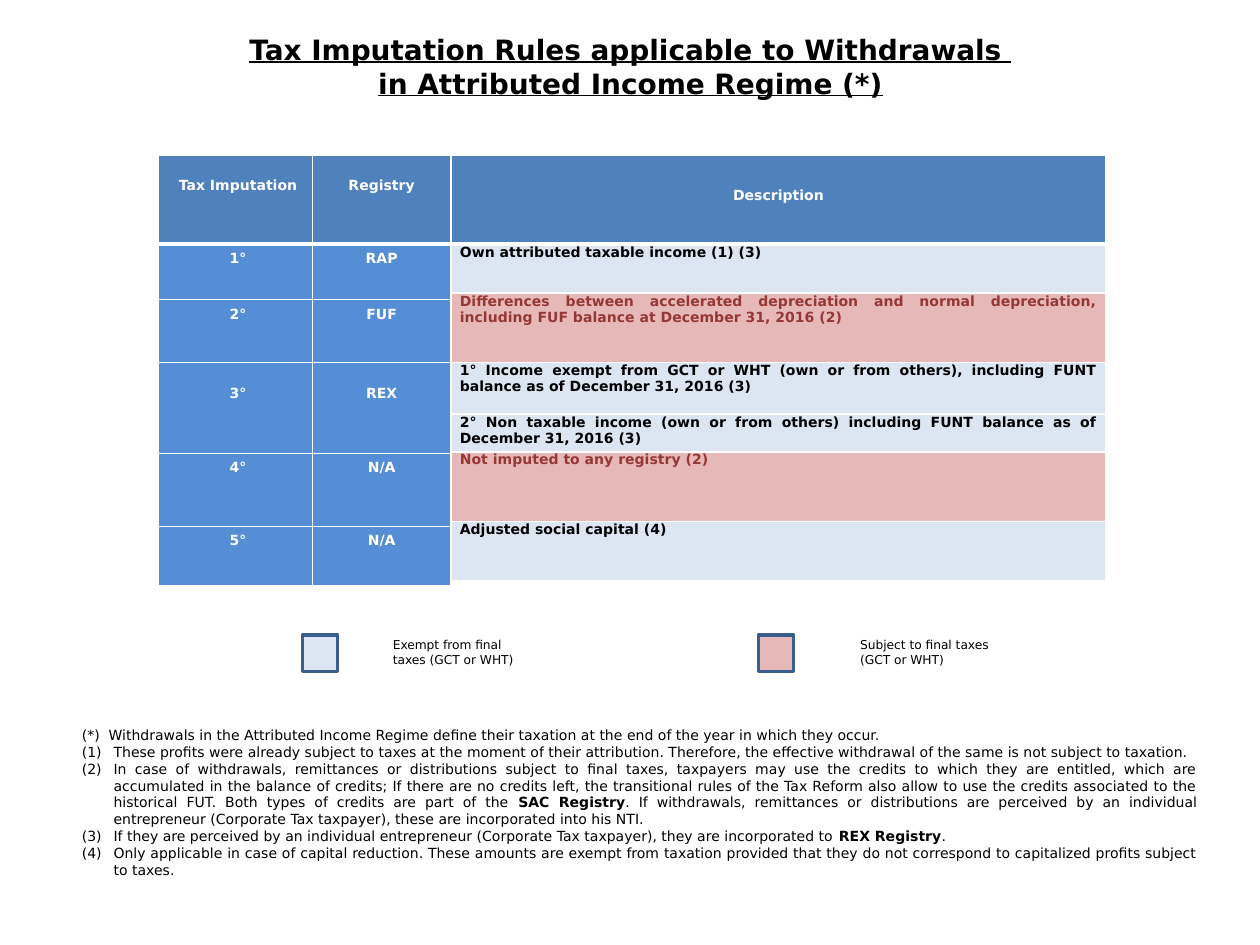
from dataclasses import dataclass

from lxml.etree import SubElement
from pptx import Presentation
from pptx.dml.color import RGBColor
from pptx.enum.shapes import MSO_SHAPE
from pptx.enum.text import MSO_ANCHOR, MSO_AUTO_SIZE, PP_ALIGN
from pptx.oxml import parse_xml
from pptx.oxml.ns import nsdecls, qn
from pptx.util import Cm, Pt


@dataclass(frozen=True)
class Theme:
    """Colours, font and type sizes of the slide."""
    font: str = "DejaVu Sans"
    title: int = 16
    body: int = 8
    legend: int = 7
    black: str = "000000"
    white: str = "FFFFFF"
    header: str = "4F81BD"
    order: str = "558ED5"
    exempt: str = "DCE6F2"
    taxed: str = "E6B9B8"
    taxed_text: str = "953735"
    key_line: str = "3A5F8C"


THEME = Theme()
TABLE_TOP = 3.12
CELL_INSET = 0.13
BLANK_LINE = 0.33
ORDER_HEIGHTS = [1.8, 1.12, 1.27, 1.83, 1.47, 1.19]
DESCRIPTION_HEIGHTS = [1.8, 0.99, 1.4, 1.04, 0.76, 1.4, 1.19]
ORDER_COLUMNS = [
    (3.2, 3.2, ["Tax Imputation", "1°", "2°", "3°", "4°", "5°"]),
    (6.3, 2.79, ["Registry", "RAP", "FUF", "REX", "N/A", "N/A"]),
]
DESCRIPTIONS = [
    ("Own attributed taxable income (1) (3)", False, PP_ALIGN.JUSTIFY),
    ("Differences between accelerated depreciation and normal depreciation, "
     "including FUF balance at December 31, 2016 (2)", True, PP_ALIGN.JUSTIFY),
    ("1° Income exempt from GCT or WHT (own or from others), including FUNT "
     "balance as of December 31, 2016 (3)", False, PP_ALIGN.JUSTIFY),
    ("2° Non taxable income (own or from others) including FUNT balance as of "
     "December 31, 2016 (3)", False, PP_ALIGN.JUSTIFY),
    ("Not imputed to any registry (2)", True, PP_ALIGN.LEFT),
    ("Adjusted social capital (4)", False, PP_ALIGN.LEFT),
]
LEGEND = [
    (6.1, 7.67, THEME.exempt, "Exempt from final taxes (GCT or WHT)"),
    (15.29, 17.09, THEME.taxed, "Subject to final taxes (GCT or WHT)"),
]
REGIME_NOTE = ("(*)\tWithdrawals in the Attributed Income Regime define their taxation "
               "at the end of the year in which they occur.")
NUMBERED_NOTES = [
    ["These profits were already subject to taxes at the moment of their attribution. "
     "Therefore, the effective withdrawal of the same is not subject to taxation."],
    ["In case of withdrawals, remittances or distributions subject to final taxes, "
     "taxpayers may use the credits to which they are entitled, which are accumulated in "
     "the balance of credits; If there are no credits left, the transitional rules of the "
     "Tax Reform also allow to use the credits associated to the historical FUT. Both "
     "types of credits are part of the ", "SAC Registry",
     ". If withdrawals, remittances or distributions are perceived by an individual "
     "entrepreneur (Corporate Tax taxpayer), these are incorporated into his NTI."],
    ["If they are perceived by an individual entrepreneur (Corporate Tax taxpayer), "
     "they are incorporated to ", "REX Registry", "."],
    ["Only applicable in case of capital reduction. These amounts are exempt from taxation "
     "provided that they do not correspond to capitalized profits subject to taxes."],
]


def style_run(run, size, color=THEME.black, bold=False, underline=None):
    """Apply the theme font to one run."""
    font = run.font
    font.name, font.size = THEME.font, Pt(size)
    font.bold, font.underline = bold, underline
    font.color.rgb = RGBColor.from_string(color)


def add_title(slide, text):
    """Place and format the title placeholder."""
    title = slide.shapes.title
    title.left, title.top, title.width, title.height = Cm(4.62), Cm(0.53), Cm(16.18), Cm(1.63)
    frame = title.text_frame
    frame.text = text
    frame.word_wrap = False
    frame.auto_size = MSO_AUTO_SIZE.SHAPE_TO_FIT_TEXT
    frame.vertical_anchor = MSO_ANCHOR.TOP
    for paragraph in frame.paragraphs:
        paragraph.alignment = PP_ALIGN.CENTER
        for run in paragraph.runs:
            style_run(run, THEME.title, bold=True, underline=True)


def add_borders(cell, row):
    """Draw white cell borders, thicker under the header row."""
    for index, side in enumerate("LRTB"):
        points = 3 if (row, side) in ((0, "B"), (1, "T")) else 1
        border = parse_xml(
            f'<a:ln{side} {nsdecls("a")} w="{Pt(points)}"><a:solidFill>'
            f'<a:srgbClr val="{THEME.white}"/></a:solidFill></a:ln{side}>')
        cell._tc.get_or_add_tcPr().insert(index, border)


def fill_cell(cell, row, text, fill, color, align, side_inset, top, bottom):
    """Write and format one table cell."""
    cell.margin_left = cell.margin_right = Cm(side_inset)
    cell.margin_top, cell.margin_bottom = Cm(top), Cm(bottom)
    cell.fill.solid()
    cell.fill.fore_color.rgb = RGBColor.from_string(fill)
    add_borders(cell, row)
    cell.text = text
    paragraph = cell.text_frame.paragraphs[0]
    paragraph.alignment = align
    style_run(paragraph.runs[0], THEME.body, color, bold=True)


def add_column(slide, left, width, heights):
    """Add a one-column table and return its cells."""
    table = slide.shapes.add_table(
        len(heights), 1, Cm(left), Cm(TABLE_TOP), Cm(width), Cm(sum(heights))).table
    table.horz_banding = False
    table.columns[0].width = Cm(width)
    for row, height in zip(table.rows, heights):
        row.height = Cm(height)
    return [row.cells[0] for row in table.rows]


def add_order_column(slide, left, width, labels):
    """Add a column of imputation orders or registries."""
    cells = add_column(slide, left, width, ORDER_HEIGHTS)
    for row, (cell, label) in enumerate(zip(cells, labels)):
        top = CELL_INSET + (BLANK_LINE if row in (0, 3) else 0)
        fill = THEME.order if row else THEME.header
        fill_cell(cell, row, label, fill, THEME.white, PP_ALIGN.CENTER, 0.25, top, CELL_INSET)


def add_description_column(slide):
    """Add the description column, coloured by tax treatment."""
    header, *cells = add_column(slide, 9.09, 13.21, DESCRIPTION_HEIGHTS)
    fill_cell(header, 0, "Description", THEME.header, THEME.white, PP_ALIGN.CENTER,
              0.18, 2 * BLANK_LINE, 0)
    for row, (cell, (text, taxed, align)) in enumerate(zip(cells, DESCRIPTIONS), 1):
        fill = THEME.taxed if taxed else THEME.exempt
        color = THEME.taxed_text if taxed else THEME.black
        fill_cell(cell, row, text, fill, color, align, 0.18, 0, 0)


def add_text_frame(slide, left, top, width, height):
    """Add a wrapping text box and return its frame."""
    frame = slide.shapes.add_textbox(Cm(left), Cm(top), Cm(width), Cm(height)).text_frame
    frame.word_wrap = True
    frame.auto_size = MSO_AUTO_SIZE.SHAPE_TO_FIT_TEXT
    return frame


def add_legend_entry(slide, key_left, label_left, color, label):
    """Add a colour key and its label."""
    key = slide.shapes.add_shape(
        MSO_SHAPE.RECTANGLE, Cm(key_left), Cm(12.8), Cm(0.71), Cm(0.74))
    key.shadow.inherit = False
    key.fill.solid()
    key.fill.fore_color.rgb = RGBColor.from_string(color)
    key.line.color.rgb = RGBColor.from_string(THEME.key_line)
    key.line.width = Pt(2)
    frame = add_text_frame(slide, label_left, 12.73, 3.28, 0.86)
    frame.text = label
    style_run(frame.paragraphs[0].runs[0], THEME.legend)


def hang(paragraph, indent):
    """Justify a paragraph with a hanging indent and return its properties."""
    paragraph.alignment = PP_ALIGN.JUSTIFY
    properties = paragraph._p.get_or_add_pPr()
    properties.set("marL", str(Cm(indent)))
    properties.set("indent", str(-Cm(indent)))
    return properties


def add_notes(slide):
    """Add the regime note and the numbered notes below it."""
    frame = add_text_frame(slide, 1.4, 14.53, 23.01, 3.33)
    frame.text = REGIME_NOTE
    regime = frame.paragraphs[0]
    hang(regime, 0.54)
    style_run(regime.runs[0], THEME.body)
    for parts in NUMBERED_NOTES:
        note = frame.add_paragraph()
        SubElement(hang(note, 0.64), qn("a:buAutoNum"), type="arabicParenBoth")
        for index, part in enumerate(parts):
            run = note.add_run()
            run.text = part
            style_run(run, THEME.body, bold=index % 2 == 1)


def main():
    """Build and save the slide."""
    deck = Presentation()
    deck.slide_width, deck.slide_height = Cm(25.4), Cm(19.05)
    slide = deck.slides.add_slide(deck.slide_layouts[5])
    add_title(slide, "Tax Imputation Rules applicable to Withdrawals \n"
                     "in Attributed Income Regime (*)")
    for column in ORDER_COLUMNS:
        add_order_column(slide, *column)
    add_description_column(slide)
    for entry in LEGEND:
        add_legend_entry(slide, *entry)
    add_notes(slide)
    deck.save("out.pptx")


if __name__ == "__main__":
    main()
